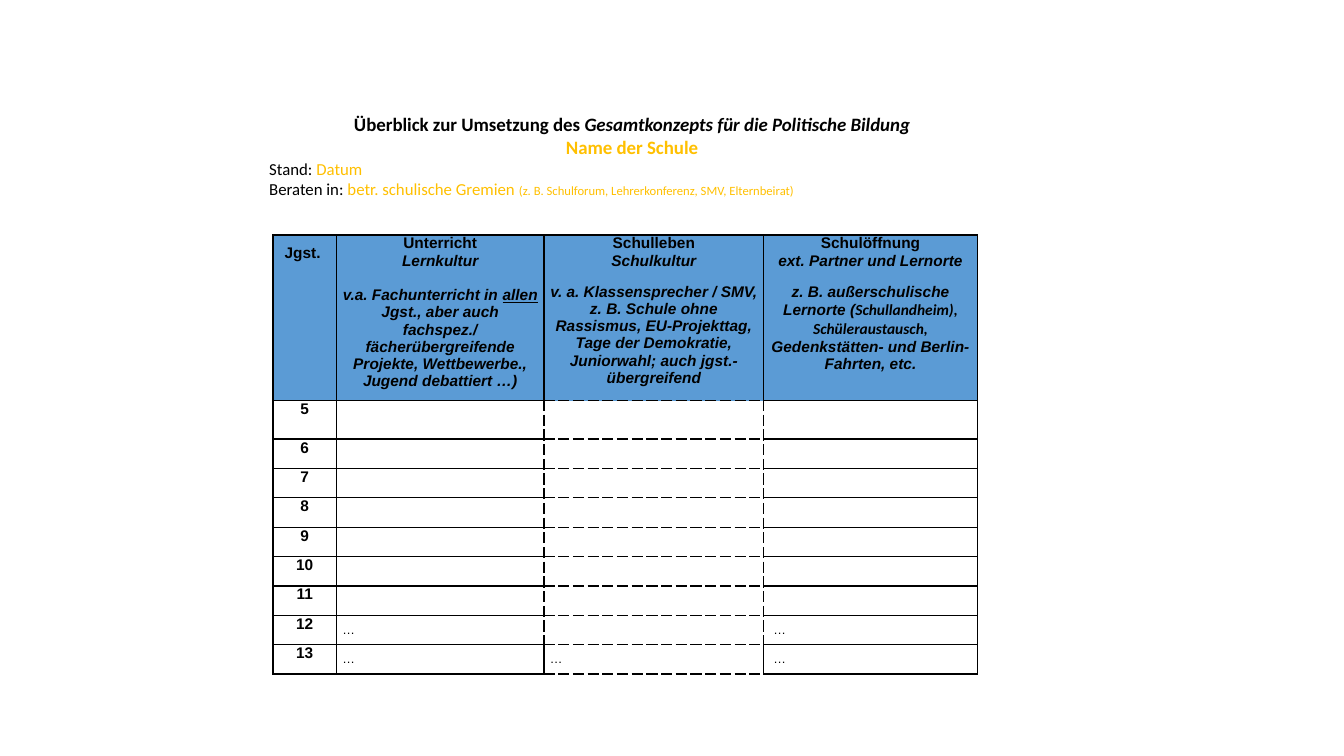
"""Builds the overview slide on the school concept for civic education."""
from dataclasses import dataclass

from lxml.etree import SubElement
from pptx import Presentation
from pptx.dml.color import RGBColor
from pptx.enum.text import MSO_ANCHOR as Anchor, MSO_AUTO_SIZE as AutoSize, PP_ALIGN as Align
from pptx.oxml.ns import qn
from pptx.slide import Slide
from pptx.table import _Cell as Cell
from pptx.text.text import TextFrame
from pptx.util import Cm, Pt


@dataclass(frozen=True)
class Theme:
    text: str = "000000"
    accent: str = "FFC000"
    header: str = "5B9BD5"
    heading_font: str = "Calibri"
    table_font: str = "Arial"
    heading: float = 13.5
    detail: float = 12
    label: float = 11
    small: float = 9
    border: float = 1


T = Theme()


@dataclass(frozen=True)
class Span:
    text: str
    size: float = T.label
    font: str = T.table_font
    color: str = T.text
    bold: bool = True
    italic: bool = False
    underline: bool = False


@dataclass(frozen=True)
class Para:
    spans: list[Span]
    align: Align = Align.CENTER
    before: float = 0


@dataclass(frozen=True)
class Heading:
    title: str
    subtitle: str
    gap: float
    details: list[Span]


def title_span(text: str, color: str = T.text, italic: bool = False) -> Span:
    return Span(text, T.heading, T.heading_font, color, italic=italic)


def detail_span(text: str, color: str = T.accent, size: float = T.detail) -> Span:
    return Span(text, size, T.heading_font, color, bold=False)


def example(text: str, font: str = T.table_font, underline: bool = False) -> Span:
    return Span(text, font=font, italic=True, underline=underline)


INTRO = [
    Para([title_span("Überblick zur Umsetzung des "),
          title_span("Gesamtkonzepts für die Politische Bildung", italic=True)]),
    Para([title_span("Name der Schule", T.accent)]),
    Para([detail_span("Stand: ", T.text), detail_span("Datum")], Align.LEFT),
    Para([detail_span("Beraten in: ", T.text), detail_span("betr. schulische Gremien "),
          detail_span("(z. B. Schulforum, Lehrerkonferenz, SMV, Elternbeirat)", size=T.small)],
         Align.LEFT),
]
HEADINGS = [
    Heading("Unterricht", "Lernkultur", 12.6, [
        example("v.a. Fachunterricht in "), example("allen ", underline=True),
        example("Jgst., aber auch fachspez./ fächerübergreifende Projekte, "
                "Wettbewerbe., Jugend debattiert …)")]),
    Heading("Schulleben", "Schulkultur", 10.3, [
        example("v. a. Klassensprecher / SMV, z. B. Schule ohne Rassismus, EU-Projekttag, "
                "Tage der Demokratie, Juniorwahl; auch jgst.-übergreifend")]),
    Heading("Schulöffnung", "ext. Partner und Lernorte", 10.3, [
        example("z. B. außerschulische Lernorte ("),
        example("Schullandheim), Schüleraustausch, ", T.heading_font),
        example("Gedenkstätten- und Berlin-Fahrten, etc.")]),
]
GRADES = range(5, 14)
ENTRIES = {(12, 1): "…", (12, 3): " …", (13, 1): "…", (13, 2): "…", (13, 3): " …"}
WIDTHS = [1.6, 5.23, 5.54, 5.38]
HEIGHTS = [3.23, 0.97] + [0.74] * 8


def write(tf: TextFrame, paras: list[Para]) -> None:
    for i, para in enumerate(paras):
        p = tf.paragraphs[0] if i == 0 else tf.add_paragraph()
        p.alignment = para.align
        p.space_before = Pt(para.before)
        for span in para.spans:
            r = p.add_run()
            r.text = span.text
            r.font.size, r.font.name = Pt(span.size), span.font
            r.font.bold, r.font.italic = span.bold, span.italic
            r.font.underline = span.underline
            r.font.color.rgb = RGBColor.from_string(span.color)


def dashed_sides(row: int, col: int) -> str:
    """Returns the dashed sides of a cell as letters out of L, R, T and B."""
    last = row == len(GRADES)
    if col == 2:
        return "B" if row == 0 else "TB" if last else "LRTB"
    return "" if row == 0 or last else {1: "R", 3: "L"}.get(col, "")


def draw_borders(cell: Cell, dashed: str) -> None:
    tc_pr = cell._tc.get_or_add_tcPr()
    for side in "LRTB":
        ln = SubElement(tc_pr, qn(f"a:ln{side}"), w=str(Pt(T.border)))
        SubElement(SubElement(ln, qn("a:solidFill")), qn("a:srgbClr"), val=T.text)
        SubElement(ln, qn("a:prstDash"), val="dash" if side in dashed else "solid")


def heading_paras(heading: Heading) -> list[Para]:
    return [Para([Span(heading.title)]), Para([Span(heading.subtitle, italic=True)]),
            Para(heading.details, before=heading.gap)]


def fill_cell(cell: Cell, row: int, col: int) -> None:
    cell.margin_left = cell.margin_right = Cm(0.15)
    cell.margin_top = cell.margin_bottom = 0
    draw_borders(cell, dashed_sides(row, col))
    if row == 0:
        cell.fill.solid()
        cell.fill.fore_color.rgb = RGBColor.from_string(T.header)
    else:
        cell.fill.background()
    tf = cell.text_frame
    if row == 0 and col == 0:
        cell.margin_top = Cm(0.24)
        write(tf, [Para([Span("Jgst. ")])])
    elif row == 0:
        write(tf, heading_paras(HEADINGS[col - 1]))
    elif col == 0:
        write(tf, [Para([Span(str(GRADES[row - 1]))])])
    elif entry := ENTRIES.get((GRADES[row - 1], col)):
        cell.vertical_anchor = Anchor.MIDDLE
        write(tf, [Para([Span(entry, T.small, bold=False)], Align.LEFT)])
    else:
        SubElement(tf.paragraphs[0]._p, qn("a:endParaRPr"), sz=str(T.small * 100))


def add_intro(s: Slide) -> None:
    sp = s.shapes.title
    sp.left, sp.top, sp.width, sp.height = Cm(6.53), Cm(2.72), Cm(18.8), Cm(2.44)
    tf = sp.text_frame
    tf.word_wrap = True
    tf.auto_size = AutoSize.SHAPE_TO_FIT_TEXT
    tf.vertical_anchor = Anchor.TOP
    write(tf, INTRO)


def add_overview(s: Slide) -> None:
    table = s.shapes.add_table(len(HEIGHTS), len(WIDTHS), Cm(6.88), Cm(5.92),
                               Cm(sum(WIDTHS)), Cm(sum(HEIGHTS))).table
    table.first_row = table.horz_banding = False
    for column, width in zip(table.columns, WIDTHS):
        column.width = Cm(width)
    for i, (row, height) in enumerate(zip(table.rows, HEIGHTS)):
        row.height = Cm(height)
        for j, cell in enumerate(row.cells):
            fill_cell(cell, i, j)


def main() -> None:
    prs = Presentation()
    prs.slide_width, prs.slide_height = Cm(33.87), Cm(19.05)
    s = prs.slides.add_slide(prs.slide_layouts[5])
    add_overview(s)
    add_intro(s)
    prs.save("out.pptx")


if __name__ == "__main__":
    main()
